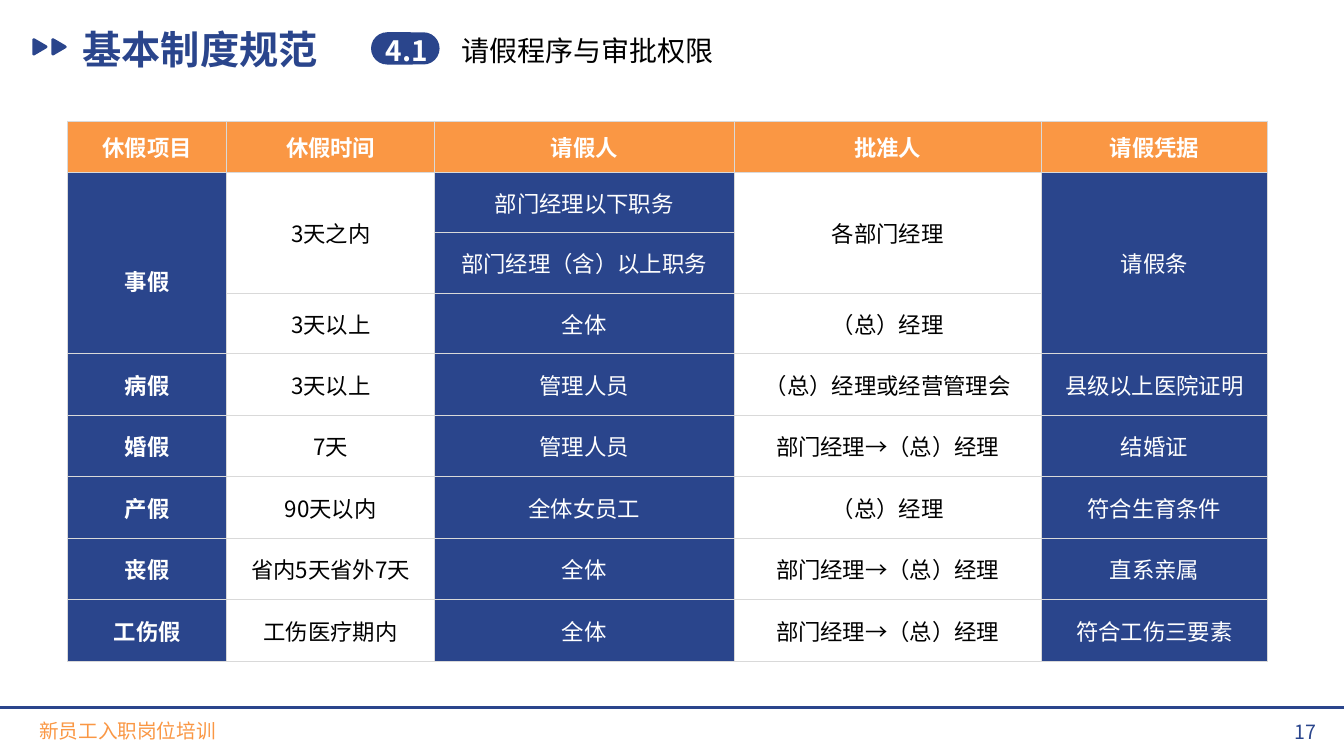
from dataclasses import dataclass

from lxml.etree import SubElement
from pptx import Presentation
from pptx.dml.color import RGBColor
from pptx.enum.shapes import MSO_CONNECTOR, MSO_SHAPE
from pptx.enum.text import MSO_ANCHOR, MSO_AUTO_SIZE, PP_ALIGN
from pptx.oxml.ns import qn
from pptx.slide import Slide
from pptx.table import _Cell
from pptx.text.text import TextFrame
from pptx.util import Inches, Pt

FONT = "Noto Sans CJK SC"
COLORS = {
    "blue": "2A458C",
    "orange": "FA9744",
    "white": "FFFFFF",
    "black": "000000",
    "border": "D9D9D9",
}
COLUMN_WIDTHS = [1.58, 2.06, 2.97, 3.05, 2.24]
ROW_HEIGHTS = [0.51] + [0.6] * 3 + [0.61] * 5
LEAVE_ROWS = [
    ["休假项目", "休假时间", "请假人", "批准人", "请假凭据"],
    ["事假", "3天之内", "部门经理以下职务", "各部门经理", "请假条"],
    [None, None, "部门经理（含）以上职务", None, None],
    [None, "3天以上", "全体", "（总）经理", None],
    ["病假", "3天以上", "管理人员", "（总）经理或经营管理会", "县级以上医院证明"],
    ["婚假", "7天", "管理人员", "部门经理→（总）经理", "结婚证"],
    ["产假", "90天以内", "全体女员工", "（总）经理", "符合生育条件"],
    ["丧假", "省内5天省外7天", "全体", "部门经理→（总）经理", "直系亲属"],
    ["工伤假", "工伤医疗期内", "全体", "部门经理→（总）经理", "符合工伤三要素"],
]
ARROW_LEFTS = [0.32, 0.51]
ARROW_TOP = 0.38
ARROW_OUTLINE = [(2, 0), (14, 7), (15, 8), (15, 9), (14, 10), (2, 17), (1, 17), (0, 16), (0, 1), (1, 0)]


@dataclass(frozen=True)
class Style:
    """Look of one piece of text."""

    size: float
    color: str
    bold: bool = False
    align: PP_ALIGN = PP_ALIGN.LEFT


@dataclass(frozen=True)
class Label:
    """A text with its place and style."""

    text: str
    left: float
    top: float
    width: float
    height: float
    style: Style


TITLE = Label("基本制度规范", 0.72, 0.2, 3.5, 0.57, Style(28, "blue", True))
LABELS = [
    Label("17", 12.68, 7.09, 0.53, 0.4, Style(14, "blue", align=PP_ALIGN.CENTER)),
    Label("新员工入职岗位培训", 0.29, 7.08, 2.09, 0.34, Style(14, "orange")),
    Label("请假程序与审批权限", 4.48, 0.28, 2.96, 0.44, Style(20, "black")),
    Label("4.1", 3.73, 0.28, 0.75, 0.44, Style(20, "white", True)),
]


def rgb(name: str) -> RGBColor:
    """Look up a named colour."""
    return RGBColor.from_string(COLORS[name])


def write(frame: TextFrame, text: str, style: Style) -> None:
    """Put one styled run into the first paragraph."""
    para = frame.paragraphs[0]
    para.alignment = style.align
    span = para.add_run()
    span.text = text
    span.font.size = Pt(style.size)
    span.font.bold = style.bold
    span.font.color.rgb = rgb(style.color)
    span.font.name = FONT
    SubElement(span.font._element, qn("a:ea"), typeface=FONT)


def fill_label(box, label: Label) -> None:
    """Place a text shape and write its label."""
    box.left, box.top = Inches(label.left), Inches(label.top)
    box.width, box.height = Inches(label.width), Inches(label.height)
    frame = box.text_frame
    frame.word_wrap = True
    frame.auto_size = MSO_AUTO_SIZE.NONE
    frame.vertical_anchor = MSO_ANCHOR.TOP
    write(frame, label.text, label.style)


def paint(shape) -> None:
    """Make a shape plain blue without outline or shadow."""
    shape.shadow.inherit = False
    shape.fill.solid()
    shape.fill.fore_color.rgb = rgb("blue")
    shape.line.fill.background()


def add_marks(page: Slide) -> None:
    """Draw the footer rule, the title arrows and the number badge."""
    rule = page.shapes.add_connector(
        MSO_CONNECTOR.STRAIGHT, 0, Inches(7.02), Inches(13.33), Inches(7.02)
    )
    rule.line.color.rgb = rgb("blue")
    rule.line.width = Pt(2.5)
    SubElement(rule._element.spPr, qn("a:effectLst"))
    for left in ARROW_LEFTS:
        builder = page.shapes.build_freeform(*ARROW_OUTLINE[0], scale=Inches(0.01))
        builder.add_line_segments(ARROW_OUTLINE[1:], close=True)
        paint(builder.convert_to_shape(Inches(left), Inches(ARROW_TOP)))
    badge = page.shapes.add_shape(
        MSO_SHAPE.ROUNDED_RECTANGLE, Inches(3.68), Inches(0.32), Inches(0.68), Inches(0.32)
    )
    badge.adjustments[0] = 0.5
    paint(badge)


def format_cell(cell: _Cell, row: int, column: int) -> None:
    """Give a cell its borders, fill and anchor."""
    properties = cell._tc.get_or_add_tcPr()
    for side in ("lnL", "lnR", "lnT", "lnB"):
        edge = SubElement(properties, qn(f"a:{side}"), w=str(Pt(0.75)))
        solid = SubElement(edge, qn("a:solidFill"))
        SubElement(solid, qn("a:srgbClr"), val=COLORS["border"])
    cell.fill.solid()
    fill = "orange" if row == 0 else "white" if column % 2 else "blue"
    cell.fill.fore_color.rgb = rgb(fill)
    cell.vertical_anchor = MSO_ANCHOR.MIDDLE


def add_leave_table(page: Slide) -> None:
    """Build the leave table, merging each cell with the gaps below it."""
    table = page.shapes.add_table(
        len(ROW_HEIGHTS), len(COLUMN_WIDTHS), Inches(0.67), Inches(1.2),
        Inches(sum(COLUMN_WIDTHS)), Inches(sum(ROW_HEIGHTS)),
    ).table
    for column, width in zip(table.columns, COLUMN_WIDTHS):
        column.width = Inches(width)
    for row, height in zip(table.rows, ROW_HEIGHTS):
        row.height = Inches(height)
    for row, texts in enumerate(LEAVE_ROWS):
        for column, text in enumerate(texts):
            cell = table.cell(row, column)
            format_cell(cell, row, column)
            if text is None:
                continue
            dark = row == 0 or column % 2 == 0
            style = Style(16, "white" if dark else "black", row == 0 or column == 0, PP_ALIGN.CENTER)
            write(cell.text_frame, text, style)
            cell.text_frame.paragraphs[0].space_before = Pt(3.2)
            last = row
            while last + 1 < len(LEAVE_ROWS) and LEAVE_ROWS[last + 1][column] is None:
                last += 1
            if last > row:
                cell.merge(table.cell(last, column))
    table.cell(1, 0).margin_top = Inches(0.4)


def main() -> None:
    """Build and save the slide."""
    deck = Presentation()
    deck.slide_width, deck.slide_height = Inches(13.33), Inches(7.5)
    page = deck.slides.add_slide(deck.slide_layouts[5])
    fill_label(page.shapes.title, TITLE)
    add_marks(page)
    for label in LABELS:
        fill_label(page.shapes.add_textbox(0, 0, 0, 0), label)
    add_leave_table(page)
    deck.save("out.pptx")


if __name__ == "__main__":
    main()
